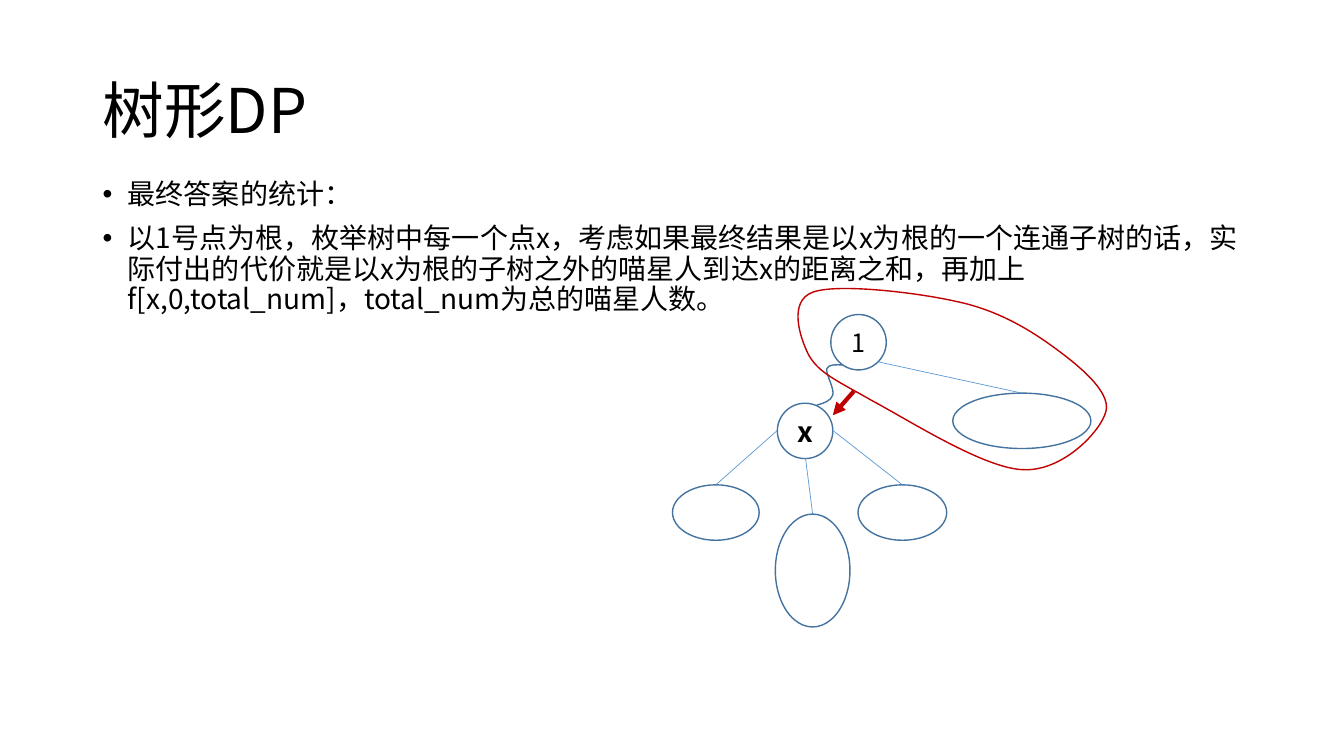
from lxml import etree
from pptx import Presentation
from pptx.dml.color import RGBColor
from pptx.enum import shapes, text
from pptx.oxml import ns
from pptx.util import Inches, Pt

BLACK = RGBColor(0x00, 0x00, 0x00)
NODE_BLUE = RGBColor(0x43, 0x73, 0x9E)
EDGE_BLUE = RGBColor(0x5B, 0x9B, 0xD5)
RED = RGBColor(0xC0, 0x00, 0x00)
FONT = "Noto Sans CJK SC"

TITLE = "树形DP"
BULLETS = [
    "最终答案的统计：",
    "以1号点为根，枚举树中每一个点x，考虑如果最终结果是以x为根的一个连通子树的话，"
    "实际付出的代价就是以x为根的子树之外的喵星人到达x的距离之和，再加上"
    "f[x,0,total_num]，total_num为总的喵星人数。",
]


def style_paragraph(paragraph, size, bold=False):
    font = paragraph.font
    font.name = FONT
    font.size = Pt(size)
    font.bold = bold
    font.color.rgb = BLACK
    latin = font._element.find(ns.qn("a:latin"))
    east_asian = etree.Element(ns.qn("a:ea"), typeface=FONT)
    latin.addnext(east_asian)


def add_bullet(paragraph):
    properties = paragraph._p.get_or_add_pPr()
    properties.set("marL", str(Inches(0.25)))
    properties.set("indent", str(-Inches(0.25)))
    bullet_font = etree.Element(ns.qn("a:buFont"), typeface="Arial")
    bullet = etree.Element(ns.qn("a:buChar"), char="•")
    defaults = properties.find(ns.qn("a:defRPr"))
    defaults.addprevious(bullet_font)
    defaults.addprevious(bullet)


def add_text_box(slide, left, top, width, height, anchor):
    box = slide.shapes.add_textbox(
        Inches(left), Inches(top), Inches(width), Inches(height))
    frame = box.text_frame
    frame.word_wrap = True
    frame.vertical_anchor = anchor
    return frame


def add_title(slide, left, top, width, height):
    frame = add_text_box(slide, left, top, width, height, text.MSO_ANCHOR.MIDDLE)
    paragraph = frame.paragraphs[0]
    paragraph.text = TITLE
    paragraph.line_spacing = 0.9
    style_paragraph(paragraph, 44)


def add_body(slide, left, top, width, height):
    frame = add_text_box(slide, left, top, width, height, text.MSO_ANCHOR.TOP)
    for index, wording in enumerate(BULLETS):
        paragraph = frame.add_paragraph() if index else frame.paragraphs[0]
        paragraph.text = wording
        paragraph.line_spacing = 0.9
        paragraph.space_before = Pt(10)
        style_paragraph(paragraph, 20)
        add_bullet(paragraph)


def add_node(parent, left, top, width, height, label="", size=18, bold=False):
    node = parent.shapes.add_shape(
        shapes.MSO_SHAPE.OVAL,
        Inches(left), Inches(top), Inches(width), Inches(height))
    node.shadow.inherit = False
    node.fill.background()
    node.line.color.rgb = NODE_BLUE
    node.line.width = Pt(1)
    if label:
        frame = node.text_frame
        frame.vertical_anchor = text.MSO_ANCHOR.MIDDLE
        paragraph = frame.paragraphs[0]
        paragraph.text = label
        paragraph.alignment = text.PP_ALIGN.CENTER
        style_paragraph(paragraph, size, bold)
    return node


def add_line(parent, start, end, color, width):
    line = parent.shapes.add_connector(
        shapes.MSO_CONNECTOR.STRAIGHT, *(Inches(value) for value in start + end))
    line.line.color.rgb = color
    line.line.width = Pt(width)
    etree.SubElement(line._element.spPr, ns.qn("a:effectLst"))
    return line


def add_path_step(path, tag, points):
    step = etree.SubElement(path, ns.qn(tag))
    for x, y in points:
        etree.SubElement(step, ns.qn("a:pt"), x=str(Inches(x)), y=str(Inches(y)))


def add_curve(parent, left, top, width, height, start, segments, color, close):
    builder = parent.shapes.build_freeform(Inches(left), Inches(top))
    builder.add_line_segments(
        [(Inches(left + width), Inches(top + height))], close=False)
    curve = builder.convert_to_shape()
    path = next(curve._element.iter(ns.qn("a:path")))
    for step in list(path):
        path.remove(step)
    add_path_step(path, "a:moveTo", [start])
    for segment in segments:
        add_path_step(path, "a:cubicBezTo", segment)
    if close:
        etree.SubElement(path, ns.qn("a:close"))
    curve.shadow.inherit = False
    curve.fill.background()
    curve.line.color.rgb = color
    curve.line.width = Pt(1)


def add_tree(slide, left, top):
    tree = slide.shapes.add_group_shape()
    add_node(tree, left + 1.57, top, 0.55, 0.55, "1")
    add_node(tree, left + 1.04, top + 0.88, 0.55, 0.55, "x", 20, True)
    subtrees = [
        ((0, 1.69, 0.86, 0.55), (1.04, 1.15)),
        ((1.02, 1.98, 0.74, 1.12), (1.32, 1.43)),
        ((2.78, 0.78, 1.37, 0.55), (2.04, 0.47)),
        ((1.84, 1.69, 0.88, 0.55), (1.59, 1.15)),
    ]
    for (x, y, width, height), (start_x, start_y) in subtrees:
        subtree = add_node(tree, left + x, top + y, width, height)
        edge = add_line(tree, (left + start_x, top + start_y),
                        (left + x + width / 2, top + y), EDGE_BLUE, 0.5)
        edge.end_connect(subtree, 0)
    add_curve(tree, left + 1.43, top + 0.5, 0.26, 0.4, (0.26, 0), [
        ((0.19, 0), (0.12, -0.01), (0.1, 0.04)),
        ((0.09, 0.09), (0.18, 0.24), (0.16, 0.3)),
        ((0.14, 0.36), (0.07, 0.38), (0, 0.4)),
    ], NODE_BLUE, False)


def add_outside_region(slide, left, top):
    add_curve(slide, left, top, 3.07, 1.8, (2.52, 0.57), [
        ((2.27, 0.39), (1.96, 0.21), (1.57, 0.13)),
        ((1.17, 0.04), (0.39, -0.05), (0.15, 0.04)),
        ((-0.09, 0.13), (0.02, 0.48), (0.11, 0.66)),
        ((0.21, 0.84), (0.38, 0.91), (0.73, 1.11)),
        ((1.09, 1.3), (1.85, 1.79), (2.24, 1.8)),
        ((2.63, 1.82), (3.01, 1.42), (3.06, 1.22)),
        ((3.11, 1.02), (2.77, 0.75), (2.52, 0.57)),
    ], RED, True)
    arrow = add_line(slide, (left + 0.56, top + 1.02),
                     (left + 0.35, top + 1.26), RED, 3)
    outline = arrow.line._get_or_add_ln()
    etree.SubElement(outline, ns.qn("a:tailEnd"), type="triangle")


def main():
    presentation = Presentation()
    presentation.slide_width = Inches(13.33)
    presentation.slide_height = Inches(7.5)
    slide = presentation.slides.add_slide(presentation.slide_layouts[6])
    add_title(slide, 0.92, 0.4, 11.5, 1.45)
    add_body(slide, 0.92, 1.74, 11.5, 4.76)
    add_tree(slide, 6.67, 3.12)
    add_outside_region(slide, 7.91, 2.86)
    presentation.save("out.pptx")


if __name__ == "__main__":
    main()
